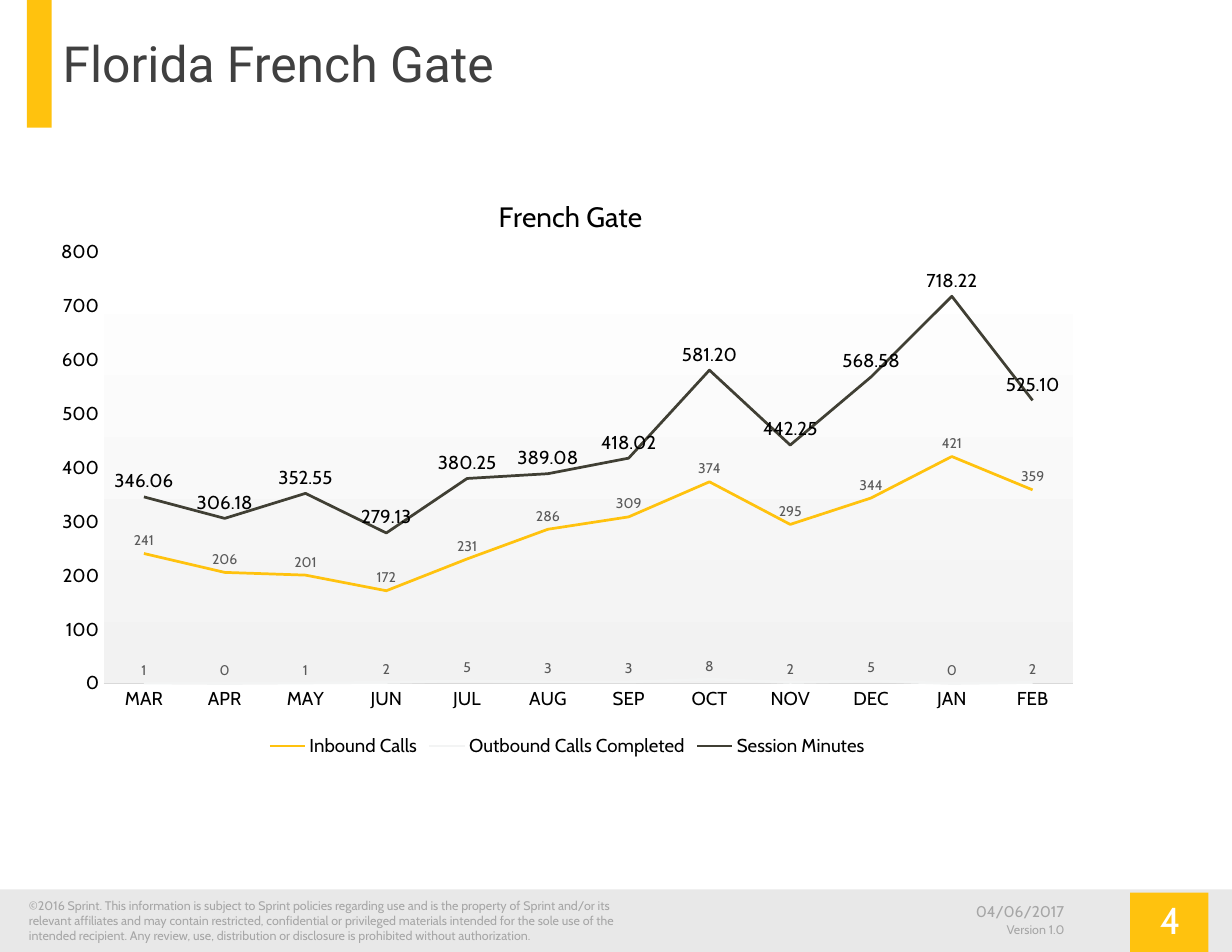
from lxml import etree
from pptx import Presentation
from pptx.chart.data import CategoryChartData
from pptx.dml.color import RGBColor
from pptx.enum.chart import XL_CHART_TYPE, XL_LABEL_POSITION, XL_LEGEND_POSITION, XL_MARKER_STYLE, XL_TICK_MARK
from pptx.enum.shapes import MSO_SHAPE
from pptx.enum.text import MSO_ANCHOR, PP_ALIGN
from pptx.oxml import parse_xml
from pptx.oxml.ns import nsdecls, qn
from pptx.util import Inches, Pt

LINE_CHART = XL_CHART_TYPE.LINE
ABOVE = XL_LABEL_POSITION.ABOVE
BOTTOM = XL_LEGEND_POSITION.BOTTOM
NO_MARKER = XL_MARKER_STYLE.NONE
NO_TICK = XL_TICK_MARK.NONE
RECTANGLE = MSO_SHAPE.RECTANGLE
TOP, MIDDLE = MSO_ANCHOR.TOP, MSO_ANCHOR.MIDDLE
LEFT, CENTER, RIGHT = PP_ALIGN.LEFT, PP_ALIGN.CENTER, PP_ALIGN.RIGHT

YELLOW = RGBColor(0xFF, 0xC2, 0x0E)
PALE = RGBColor(0xF3, 0xF4, 0xF4)
OLIVE = RGBColor(0x40, 0x3F, 0x34)
BAND = RGBColor(0xE8, 0xE8, 0xE8)
AXIS = RGBColor(0xD9, 0xD9, 0xD9)
FOOTER = RGBColor(0xA6, 0xA6, 0xA6)
LABEL = RGBColor(0x59, 0x59, 0x59)
HEADING = RGBColor(0x40, 0x40, 0x40)
BLACK = RGBColor(0, 0, 0)
WHITE = RGBColor(0xFF, 0xFF, 0xFF)

WIDTH, HEIGHT = 11, 8.5
BODY_FONT, TITLE_FONT = "Cabin", "Roboto"
INSETS = (0.1, 0.05)

BLOCKS = [
    ((0.24, 0, 0.22, 1.14), YELLOW),
    ((0, 7.94, WIDTH, HEIGHT - 7.94), BAND),
    ((10.09, 7.97, 0.7, HEIGHT - 7.97), YELLOW),
]

COPYRIGHT = (
    "©2016 Sprint. This information is subject to Sprint policies regarding use and is the property "
    "of Sprint and/or its relevant affiliates and may contain restricted, confidential or privileged "
    "materials intended for the sole use of the intended recipient. Any review, use, distribution or "
    "disclosure is prohibited without authorization."
)

# text, box, size, colour, font, alignment, anchor, insets
TEXTS = [
    (COPYRIGHT, (0.16, 7.97, 5.75, 0.64), 8, FOOTER, BODY_FONT, LEFT, TOP, INSETS),
    ("4", (9.76, 7.97, 1.38, 0.48), 24, WHITE, BODY_FONT, CENTER, TOP, (0.08, 0.04)),
    ("04/06/2017", (7.85, 8, 1.75, 0.27), 10, FOOTER, BODY_FONT, RIGHT, TOP, INSETS),
    ("Version 1.0", (8.89, 8.18, 1.36, 0.24), 8, FOOTER, BODY_FONT, LEFT, TOP, INSETS),
    ("Florida French Gate", (0.56, 0.1, 9.34, 0.92), 32, HEADING, TITLE_FONT, LEFT, MIDDLE, (0, 0)),
]

CHART_BOX = (0.36, 1.45, 9.41, 5.35)
CHART_TITLE = "French Gate"
TITLE_SPOT = {"x": 0.43, "y": 0.05}
PLOT_AREA = {"x": 0.06, "y": 0.15, "w": 0.92, "h": 0.72}
MONTHS = ["MAR", "APR", "MAY", "JUN", "JUL", "AUG", "SEP", "OCT", "NOV", "DEC", "JAN", "FEB"]
# name, values, line colour, label size, label colour, number format
SERIES = [
    ("Inbound Calls", [241, 206, 201, 172, 231, 286, 309, 374, 295, 344, 421, 359],
     YELLOW, 9, LABEL, "#,##0"),
    ("Outbound Calls Completed", [1, 0, 1, 2, 5, 3, 3, 8, 2, 5, 0, 2],
     PALE, 9, LABEL, "#,##0"),
    ("Session Minutes", [346.06, 306.18, 352.55, 279.13, 380.25, 389.08,
                         418.02, 581.2, 442.25, 568.58, 718.22, 525.1],
     OLIVE, 12, BLACK, "#,##0.00"),
]


def style(font, size, color, name=BODY_FONT):
    font.size, font.name, font.bold = Pt(size), name, False
    font.color.rgb = color


def add_block(slide, box, color):
    block = slide.shapes.add_shape(RECTANGLE, *map(Inches, box))
    block.shadow.inherit = False
    block.fill.solid()
    block.fill.fore_color.rgb = color
    block.line.fill.background()


def add_text(slide, text, box, size, color, font, align, anchor, insets):
    frame = slide.shapes.add_textbox(*map(Inches, box)).text_frame
    frame.word_wrap = True
    frame.vertical_anchor = anchor
    frame.margin_left = frame.margin_right = Inches(insets[0])
    frame.margin_top = frame.margin_bottom = Inches(insets[1])
    frame.text = text
    paragraph = frame.paragraphs[0]
    paragraph.alignment = align
    style(paragraph.runs[0].font, size, color, font)


def place(element, shares, inner=False):
    """Give a chart part a manual layout, in shares of the chart's size."""
    for old in element.findall(qn("c:layout")):
        element.remove(old)
    layout = etree.Element(qn("c:layout"))
    manual = etree.SubElement(layout, qn("c:manualLayout"))
    settings = [("layoutTarget", "inner")] if inner else []
    settings += [("xMode", "edge"), ("yMode", "edge"), *shares.items()]
    for tag, value in settings:
        etree.SubElement(manual, qn("c:" + tag)).set("val", str(value))
    text = element.find(qn("c:tx"))
    element.insert(0 if text is None else 1, layout)


def fill_plot(plot_area):
    plot_area.append(parse_xml(
        f'<c:spPr {nsdecls("c", "a")}><a:gradFill><a:gsLst>'
        '<a:gs pos="0"><a:srgbClr val="FFFFFF"/></a:gs>'
        '<a:gs pos="100000"><a:srgbClr val="F2F2F2"/></a:gs>'
        '</a:gsLst><a:lin ang="5400000" scaled="0"/></a:gradFill></c:spPr>'))


def add_call_chart(slide):
    data = CategoryChartData()
    data.categories = MONTHS
    for name, values, _, _, _, number_format in SERIES:
        data.add_series(name, values, number_format)
    chart = slide.shapes.add_chart(LINE_CHART, *map(Inches, CHART_BOX), data).chart
    style(chart.font, 10, BLACK)

    chart.has_title = True
    title = chart.chart_title
    title.text_frame.text = CHART_TITLE
    style(title.text_frame.paragraphs[0].runs[0].font, 18, BLACK)
    title.include_in_layout = False
    place(title._element, TITLE_SPOT)

    chart.has_legend = True
    chart.legend.position = BOTTOM
    chart.legend.include_in_layout = False
    style(chart.legend.font, 12, BLACK)

    months, amounts = chart.category_axis, chart.value_axis
    for axis in (months, amounts):
        axis.major_tick_mark = axis.minor_tick_mark = NO_TICK
        axis.has_major_gridlines = False
        style(axis.tick_labels.font, 12, BLACK)
    months.format.line.color.rgb = AXIS
    months.format.line.width = Pt(0.75)
    amounts.format.line.fill.background()
    amounts.minimum_scale, amounts.maximum_scale, amounts.major_unit = 0, 800, 100
    amounts.tick_labels.number_format = "#,##0"
    amounts.tick_labels.number_format_is_linked = False

    plot = chart.plots[0]
    plot.vary_by_categories = False
    for line, (_, _, color, size, label_color, number_format) in zip(plot.series, SERIES):
        line.smooth = False
        line.marker.style = NO_MARKER
        line.format.line.color.rgb = color
        line.format.line.width = Pt(1.75)
        labels = line.data_labels
        labels.show_value = True
        labels.position = ABOVE
        labels.number_format = number_format
        labels.number_format_is_linked = False
        style(labels.font, size, label_color)

    plot_area = chart._chartSpace.chart.plotArea
    place(plot_area, PLOT_AREA, inner=True)
    fill_plot(plot_area)


def main():
    deck = Presentation()
    deck.slide_width, deck.slide_height = Inches(WIDTH), Inches(HEIGHT)
    slide = deck.slides.add_slide(deck.slide_layouts[6])
    for block in BLOCKS:
        add_block(slide, *block)
    for text in TEXTS:
        add_text(slide, *text)
    add_call_chart(slide)
    deck.save("out.pptx")


if __name__ == "__main__":
    main()
